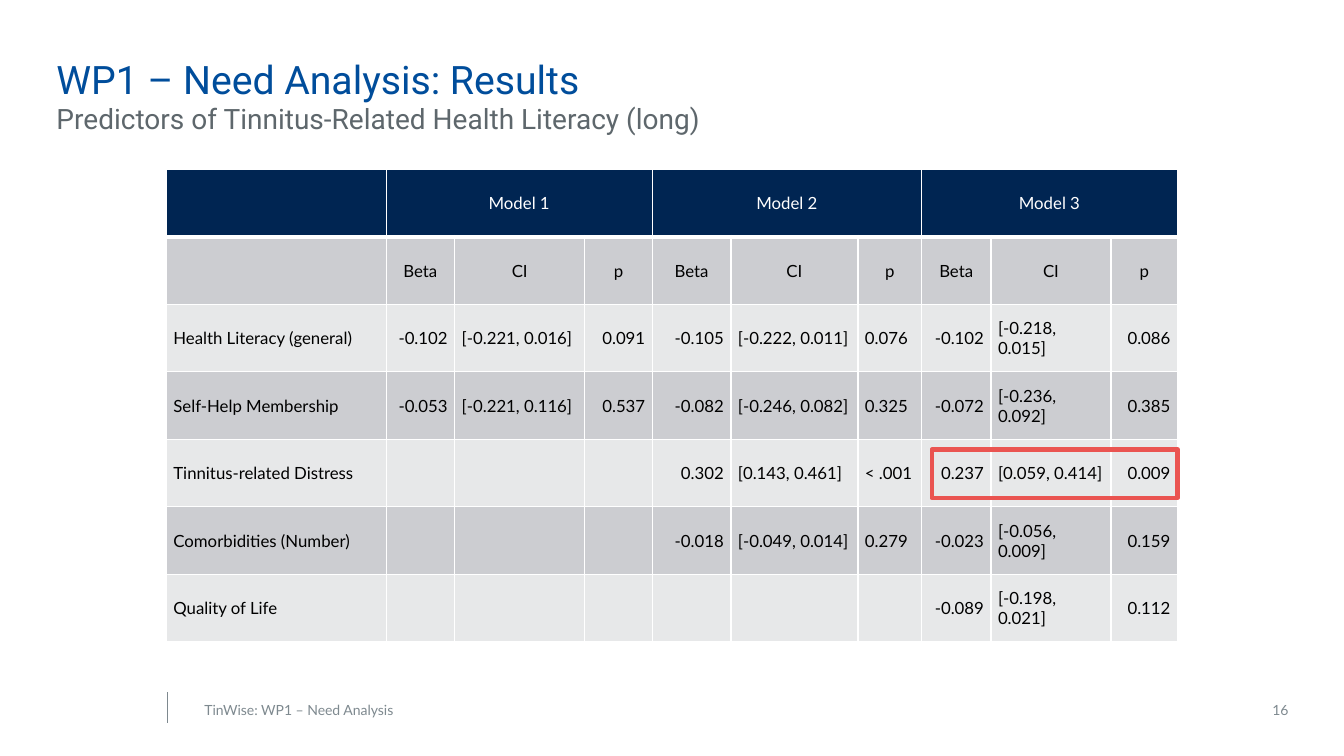
from dataclasses import dataclass

import pptx
import pptx.dml.color
import pptx.enum.shapes
import pptx.enum.text
import pptx.oxml
import pptx.oxml.ns
import pptx.util
from pptx.dml.color import RGBColor

PX = 9144  # one px is a hundredth of an inch

NAVY = RGBColor(0x00, 0x25, 0x52)
BLUE = RGBColor(0x00, 0x4D, 0x9B)
SLATE = RGBColor(0x5E, 0x67, 0x6C)
GREY = RGBColor(0x7E, 0x89, 0x8F)
DARK_BAND = RGBColor(0xCC, 0xCD, 0xD1)
LIGHT_BAND = RGBColor(0xE7, 0xE8, 0xE9)
RED = RGBColor(0xEA, 0x54, 0x51)
WHITE = RGBColor(0xFF, 0xFF, 0xFF)
BLACK = RGBColor(0x00, 0x00, 0x00)

ALIGN = pptx.enum.text.PP_ALIGN
ANCHOR = pptx.enum.text.MSO_ANCHOR
LEFT, CENTER, RIGHT = ALIGN.LEFT, ALIGN.CENTER, ALIGN.RIGHT


@dataclass(frozen=True)
class Area:
    left: int
    top: int
    width: int
    height: int

    def emu(self) -> tuple[int, int, int, int]:
        return self.left * PX, self.top * PX, self.width * PX, self.height * PX


@dataclass(frozen=True)
class Column:
    width: int
    heading: str
    align: ALIGN


@dataclass(frozen=True)
class Predictor:
    name: str
    values: tuple[str, ...]
    first_model: int = 1


COLUMNS = [
    Column(218, "", LEFT),
    Column(68, "Beta", RIGHT), Column(129, "CI", LEFT), Column(67, "p", RIGHT),
    Column(78, "Beta", RIGHT), Column(126, "CI", LEFT), Column(63, "p", LEFT),
    Column(69, "Beta", RIGHT), Column(119, "CI", LEFT), Column(66, "p", RIGHT),
]
PER_MODEL = 3
MODELS = ["Model 1", "Model 2", "Model 3"]
PREDICTORS = [
    Predictor("Health Literacy (general)", (
        "-0.102", "[-0.221, 0.016]", "0.091",
        "-0.105", "[-0.222, 0.011]", "0.076",
        "-0.102", "[-0.218, 0.015]", "0.086")),
    Predictor("Self-Help Membership", (
        "-0.053", "[-0.221, 0.116]", "0.537",
        "-0.082", "[-0.246, 0.082]", "0.325",
        "-0.072", "[-0.236, 0.092]", "0.385")),
    Predictor("Tinnitus-related Distress", (
        "0.302", "[0.143, 0.461]", "< .001",
        "0.237", "[0.059, 0.414]", "0.009"), first_model=2),
    Predictor("Comorbidities (Number)", (
        "-0.018", "[-0.049, 0.014]", "0.279",
        "-0.023", "[-0.056, 0.009]", "0.159"), first_model=2),
    Predictor("Quality of Life", ("-0.089", "[-0.198, 0.021]", "0.112"), first_model=3),
]
ROW_HEIGHT = 67
TABLE = Area(165, 168, sum(column.width for column in COLUMNS),
             ROW_HEIGHT * (len(PREDICTORS) + 2))


def write(frame, text: str, *, size: int, color: RGBColor, font: str = "Lato",
          align: ALIGN = LEFT) -> None:
    para = frame.paragraphs[0]
    para.alignment = align
    span = para.add_run()
    span.text = text
    span.font.name = font
    span.font.size = pptx.util.Pt(size)
    span.font.bold = False
    span.font.color.rgb = color


def fill_placeholder(holder, area: Area, text: str, *, size: int, color: RGBColor) -> None:
    holder.left, holder.top, holder.width, holder.height = area.emu()
    frame = holder.text_frame
    frame.margin_left = frame.margin_top = frame.margin_right = frame.margin_bottom = 0
    frame.vertical_anchor = ANCHOR.TOP
    frame.auto_size = pptx.enum.text.MSO_AUTO_SIZE.NONE
    para = frame.paragraphs[0]
    properties = para._p.get_or_add_pPr()
    properties.set("marL", "0")
    properties.set("indent", "0")
    properties.append(pptx.oxml.parse_xml(
        f'<a:buNone {pptx.oxml.ns.nsdecls("a")}/>'))
    para.space_before = pptx.util.Pt(0)
    write(frame, text, size=size, color=color, font="Roboto")


def add_label(page, area: Area, text: str, *, align: ALIGN, inset: int) -> None:
    frame = page.shapes.add_textbox(*area.emu()).text_frame
    frame.word_wrap = True
    frame.vertical_anchor = ANCHOR.MIDDLE
    frame.margin_left = frame.margin_right = inset * PX
    frame.margin_top = frame.margin_bottom = 0
    write(frame, text, size=10, color=GREY, align=align)


def format_cell(cell, *, fill: RGBColor, top: int = 1, bottom: int = 1) -> None:
    properties = cell._tc.get_or_add_tcPr()
    for side, points in (("L", 1), ("R", 1), ("T", top), ("B", bottom)):
        properties.append(pptx.oxml.parse_xml(
            f'<a:ln{side} {pptx.oxml.ns.nsdecls("a")} w="{pptx.util.Pt(points)}">'
            f'<a:solidFill><a:srgbClr val="{WHITE}"/></a:solidFill></a:ln{side}>'))
    cell.fill.solid()
    cell.fill.fore_color.rgb = fill
    cell.vertical_anchor = ANCHOR.MIDDLE
    cell.margin_left = cell.margin_right = 7 * PX
    cell.margin_top = cell.margin_bottom = 0


def add_results(page) -> None:
    rows = len(PREDICTORS) + 2
    table = page.shapes.add_table(rows, len(COLUMNS), *TABLE.emu()).table
    for slot, column in zip(table.columns, COLUMNS):
        slot.width = column.width * PX

    # Fills and borders
    for index in range(rows):
        table.rows[index].height = ROW_HEIGHT * PX
        for cell in table.rows[index].cells:
            if index == 0:
                format_cell(cell, fill=NAVY, bottom=3)
            else:
                band = DARK_BAND if index % 2 else LIGHT_BAND
                format_cell(cell, fill=band, top=3 if index == 1 else 1)

    # Model headings, each over its three columns
    for index, model in enumerate(MODELS):
        start = 1 + index * PER_MODEL
        cell = table.cell(0, start)
        cell.merge(table.cell(0, start + PER_MODEL - 1))
        write(cell.text_frame, model, size=12, color=WHITE, align=CENTER)

    # Column headings and values
    for index, column in enumerate(COLUMNS):
        if column.heading:
            write(table.cell(1, index).text_frame, column.heading,
                  size=12, color=BLACK, align=CENTER)
    for row, predictor in enumerate(PREDICTORS, start=2):
        write(table.cell(row, 0).text_frame, predictor.name, size=12, color=BLACK)
        start = 1 + (predictor.first_model - 1) * PER_MODEL
        for index, value in enumerate(predictor.values, start):
            write(table.cell(row, index).text_frame, value,
                  size=12, color=BLACK, align=COLUMNS[index].align)


def main() -> None:
    deck = pptx.Presentation()
    deck.slide_width, deck.slide_height = 1333 * PX, 750 * PX
    page = deck.slides.add_slide(deck.slide_layouts[1])

    # Title and subtitle
    fill_placeholder(page.shapes.title, Area(56, 55, 999, 44),
                     "WP1 – Need Analysis: Results", size=28, color=BLUE)
    fill_placeholder(page.placeholders[1], Area(56, 101, 999, 27),
                     "Predictors of Tinnitus-Related Health Literacy (long)",
                     size=20, color=SLATE)

    # Footer
    rule = page.shapes.add_connector(pptx.enum.shapes.MSO_CONNECTOR.STRAIGHT,
                                     166 * PX, 687 * PX, 166 * PX, 717 * PX)
    rule.line.color.rgb = GREY
    rule.line.width = pptx.util.Pt(1)
    rule._element.spPr.append(pptx.oxml.parse_xml(
        f'<a:effectLst {pptx.oxml.ns.nsdecls("a")}/>'))
    add_label(page, Area(978, 690, 300, 28), "16", align=RIGHT, inset=0)
    add_label(page, Area(193, 690, 450, 28), "TinWise: WP1 – Need Analysis",
              align=LEFT, inset=10)

    # Table and highlight on the significant predictor
    add_results(page)
    highlight = page.shapes.add_shape(pptx.enum.shapes.MSO_SHAPE.RECTANGLE,
                                      *Area(924, 446, 244, 48).emu())
    highlight.shadow.inherit = False
    highlight.fill.background()
    highlight.line.color.rgb = RED
    highlight.line.width = pptx.util.Pt(3)

    deck.save("out.pptx")


if __name__ == "__main__":
    main()
